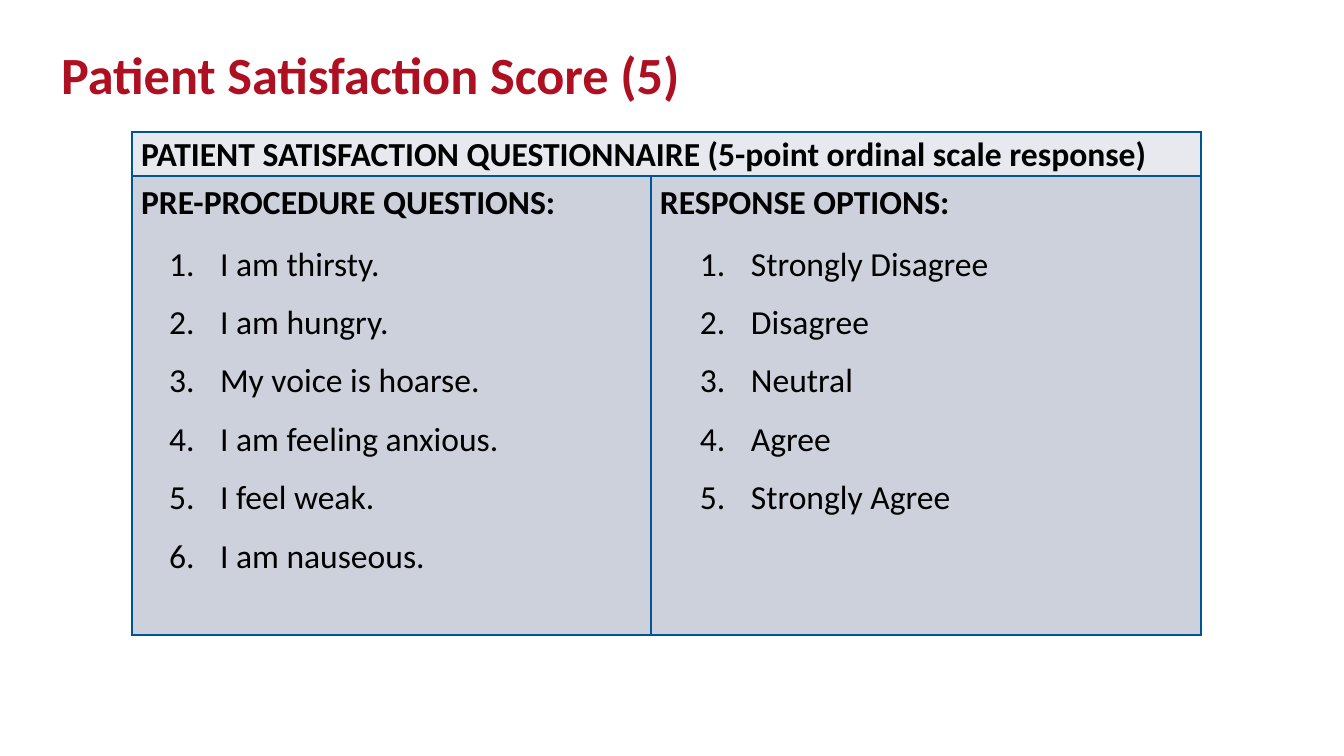
from lxml import etree
from pptx import Presentation
from pptx.dml.color import RGBColor
from pptx.enum.text import MSO_ANCHOR, PP_ALIGN
from pptx.oxml.ns import qn
from pptx.util import Pt

PX = 914400 / 134.4
MIDDLE = MSO_ANCHOR.MIDDLE
JUSTIFY = PP_ALIGN.JUSTIFY
RED, BLUE, BLACK = "AE1022", "005694", "000000"
HEADER_FILL, BODY_FILL = "E7E9EE", "CCD1DC"
HEADING = {"line_spacing": 1.15, "space_after": Pt(8)}
ITEM = {"line_spacing": 1.15, "space_after": Pt(6)}
QUESTIONS = ["I am thirsty.", "I am hungry.", "My voice is hoarse.",
             "I am feeling anxious.", "I feel weak.", "I am nauseous."]
OPTIONS = ["Strongly Disagree", "Disagree", "Neutral", "Agree", "Strongly Agree"]


def px(length):
    return round(length * PX)


def color(value):
    return RGBColor.from_string(value)


def apply(target, values):
    for name, value in values.items():
        setattr(target, name, value)


class SlideBuilder:
    """Holds the text style and the current slide, and adds its elements."""

    def __init__(self, deck):
        self.font = "Calibri"
        self.page = deck.slides.add_slide(deck.slide_layouts[6])

    def text(self, para, text, size, bold, ink, layout):
        apply(para, layout)
        span = para.add_run()
        span.text = text
        apply(span.font, {"name": self.font, "size": Pt(size), "bold": bold})
        span.font.color.rgb = color(ink)

    def title(self, text, left, top, width, height):
        box = self.page.shapes.add_textbox(px(left), px(top), px(width), px(height))
        apply(box.text_frame, {"word_wrap": True, "vertical_anchor": MIDDLE})
        self.text(box.text_frame.paragraphs[0], text, 28, True, RED,
                  {"line_spacing": Pt(25)})

    def table(self, left, top, columns, rows):
        frame = self.page.shapes.add_table(len(rows), len(columns), px(left), px(top),
                                           px(sum(columns)), px(sum(rows)))
        grid = frame.table
        for column, width in zip(grid.columns, columns):
            column.width = px(width)
        for row, height in zip(grid.rows, rows):
            row.height = px(height)
        return grid

    def cell(self, cell, fill):
        apply(cell, {"margin_left": px(9), "margin_right": px(9),
                     "margin_top": 0, "margin_bottom": 0})
        properties = cell._tc.get_or_add_tcPr()
        for side in ("a:lnL", "a:lnR", "a:lnT", "a:lnB"):
            line = etree.SubElement(properties, qn(side), w=str(int(Pt(1))))
            solid = etree.SubElement(line, qn("a:solidFill"))
            etree.SubElement(solid, qn("a:srgbClr"), val=BLUE)
        cell.fill.solid()
        cell.fill.fore_color.rgb = color(fill)

    def heading(self, cell, text, layout):
        self.text(cell.text_frame.paragraphs[0], text, 18, True, BLACK, layout)

    def numbered(self, cell, items, indent):
        for text in items:
            para = cell.text_frame.add_paragraph()
            properties = para._p.get_or_add_pPr()
            properties.set("marL", str(px(indent)))
            properties.set("indent", str(px(-51)))
            etree.SubElement(properties, qn("a:buAutoNum"), type="arabicPeriod")
            self.text(para, text, 18, False, BLACK, ITEM)


def main():
    deck = Presentation()
    apply(deck, {"slide_width": px(1344), "slide_height": px(756)})
    slide = SlideBuilder(deck)
    slide.title("Patient Satisfaction Score (5)", 48, 50, 1170, 63)

    grid = slide.table(132, 132, [519, 550], [44, 459])
    for row, fill in enumerate((HEADER_FILL, BODY_FILL)):
        for column in range(2):
            slide.cell(grid.cell(row, column), fill)
    grid.cell(0, 0).merge(grid.cell(0, 1))
    slide.heading(grid.cell(0, 0),
                  "PATIENT SATISFACTION QUESTIONNAIRE (5-point ordinal scale response)",
                  {"alignment": JUSTIFY, "line_spacing": 1.07, "space_after": Pt(8)})

    lists = [("PRE-PROCEDURE QUESTIONS:", QUESTIONS, 79),
             ("RESPONSE OPTIONS:", OPTIONS, 91)]
    for column, (text, items, indent) in enumerate(lists):
        cell = grid.cell(1, column)
        slide.heading(cell, text, HEADING)
        slide.numbered(cell, items, indent)
    deck.save("out.pptx")


if __name__ == "__main__":
    main()
